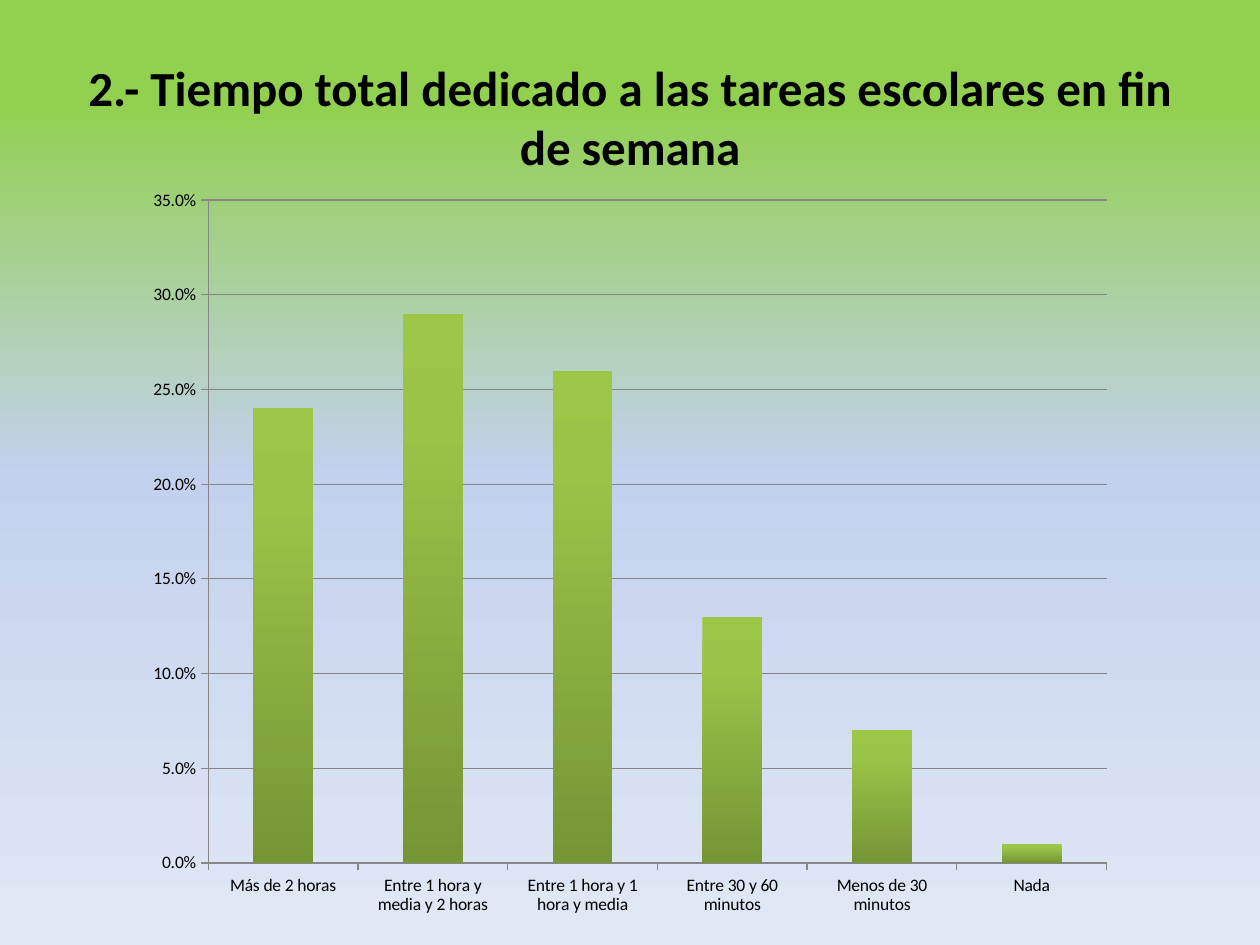
from typing import NamedTuple

from lxml.etree import SubElement
from pptx import Presentation
from pptx.chart.data import CategoryChartData
from pptx.dml.color import RGBColor
from pptx.enum.chart import XL_CHART_TYPE, XL_TICK_MARK
from pptx.enum.text import MSO_ANCHOR, PP_ALIGN
from pptx.oxml.ns import qn
from pptx.util import Inches, Pt

FONT = "Calibri"
BLACK = RGBColor(0x00, 0x00, 0x00)
AXIS_GRAY = RGBColor(0x86, 0x86, 0x86)


class Stop(NamedTuple):
    percent: int
    color: RGBColor


class Answer(NamedTuple):
    label: str
    share: float


BACKGROUND = [
    Stop(11, RGBColor(0x92, 0xD0, 0x50)),
    Stop(50, RGBColor(0xC2, 0xD1, 0xED)),
    Stop(100, RGBColor(0xE1, 0xE8, 0xF5)),
]
BARS = [
    Stop(0, RGBColor(0x9C, 0xC7, 0x46)),
    Stop(20, RGBColor(0x9B, 0xC3, 0x48)),
    Stop(100, RGBColor(0x76, 0x95, 0x35)),
]
ANSWERS = [
    Answer("Más de 2 horas", 0.24),
    Answer("Entre 1 hora y media y 2 horas", 0.29),
    Answer("Entre 1 hora y 1 hora y media", 0.26),
    Answer("Entre 30 y 60 minutos", 0.13),
    Answer("Menos de 30 minutos", 0.07),
    Answer("Nada", 0.01),
]


def fill_downwards(fill, parent, stops: list[Stop]) -> None:
    """Give the fill inside parent a top-to-bottom gradient."""
    fill.gradient()
    fill.gradient_angle = 270
    stop_list = next(parent.iter(qn("a:gsLst")))
    for old in list(stop_list):
        stop_list.remove(old)
    for stop in stops:
        gs = SubElement(stop_list, qn("a:gs"), pos=str(stop.percent * 1000))
        SubElement(gs, qn("a:srgbClr"), val=str(stop.color))


def style_line(line) -> None:
    line.color.rgb = AXIS_GRAY
    line.width = Pt(0.75)


def add_title(s, text: str) -> None:
    title = s.shapes.title
    title.left, title.top = Inches(0.5), Inches(0.3)
    title.width, title.height = Inches(9), Inches(1.25)
    tf = title.text_frame
    tf.text = text
    tf.vertical_anchor = MSO_ANCHOR.MIDDLE
    p = tf.paragraphs[0]
    p.alignment = PP_ALIGN.CENTER
    font = p.runs[0].font
    font.name, font.size, font.bold = FONT, Pt(28), True
    font.color.rgb = BLACK


def add_answer_chart(s, answers: list[Answer]) -> None:
    data = CategoryChartData(number_format="0.0%")
    data.categories = [a.label for a in answers]
    data.add_series("Series 1", [a.share for a in answers])
    chart = s.shapes.add_chart(
        XL_CHART_TYPE.COLUMN_CLUSTERED,
        Inches(1.06), Inches(1.39), Inches(7.88), Inches(5.99), data,
    ).chart
    chart.has_legend = False
    chart.has_title = False
    chart.font.name, chart.font.size = FONT, Pt(10)
    chart.font.color.rgb = BLACK

    # Axes and gridlines
    for axis in (chart.category_axis, chart.value_axis):
        axis.major_tick_mark = XL_TICK_MARK.OUTSIDE
        axis.minor_tick_mark = XL_TICK_MARK.NONE
        style_line(axis.format.line)
    values = chart.value_axis
    values.minimum_scale, values.maximum_scale = 0, 0.35
    values.major_unit = 0.05
    values.has_major_gridlines = True
    style_line(values.major_gridlines.format.line)
    values.tick_labels.number_format = "0.0%"
    values.tick_labels.number_format_is_linked = False

    # Bars
    plot = chart.plots[0]
    plot.gap_width = 150
    plot.vary_by_categories = False
    series = plot.series[0]
    fill_downwards(series.format.fill, series._element, BARS)


def main() -> None:
    prs = Presentation()
    prs.slide_width, prs.slide_height = Inches(10), Inches(7.5)
    s = prs.slides.add_slide(prs.slide_layouts[5])
    fill_downwards(s.background.fill, s._element, BACKGROUND)
    add_title(s, "2.- Tiempo total dedicado a las tareas escolares en fin de semana")
    add_answer_chart(s, ANSWERS)
    prs.save("out.pptx")


if __name__ == "__main__":
    main()
